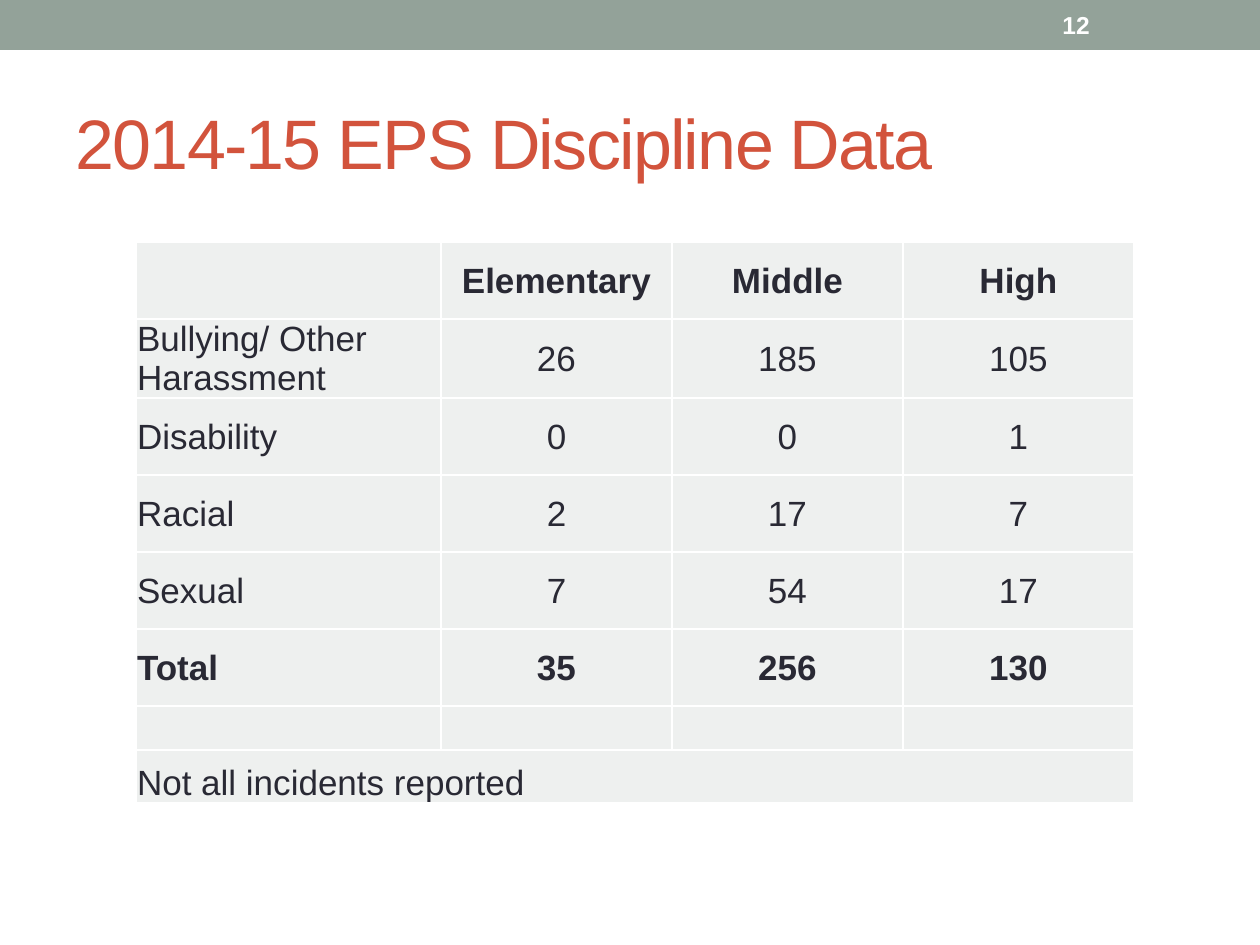
import lxml.etree
import pptx
import pptx.dml.color
import pptx.enum.shapes
import pptx.enum.text
import pptx.oxml.ns
import pptx.util

HEADING = "2014-15 EPS Discipline Data"
PAGE_NUMBER = "12"
INCIDENTS = [
    ("", "Elementary", "Middle", "High"),
    ("Bullying/ Other Harassment", "26", "185", "105"),
    ("Disability", "0", "0", "1"),
    ("Racial", "2", "17", "7"),
    ("Sexual", "7", "54", "17"),
    ("Total", "35", "256", "130"),
    ("", "", "", ""),
    ("Not all incidents reported", "", "", ""),
]
BOLD_ROWS = {0, 5}
NOTE_ROW = len(INCIDENTS) - 1

THEME = {
    "font": "Arial",
    "banner": "93A299",
    "heading": "D2533C",
    "ink": "292934",
    "cell": "EEF0EF",
    "white": "FFFFFF",
    "heading_size": 40,
    "table_size": 20,
    "number_size": 14,
    "rule_width": 1,
}

SLIDE_SIZE = (1260, 945)
BANNER_BOX = (0, 0, 1260, 50)
HEADING_BOX = (63, 73, 1134, 136)
NUMBER_BOX = (1050, 2, 147, 46)
TABLE_ORIGIN = (136, 242)
COLUMN_WIDTHS = [305] + [231] * 3
ROW_HEIGHTS = [77] * 6 + [44, 53]

ALIGN = pptx.enum.text.PP_ALIGN
ANCHOR = pptx.enum.text.MSO_ANCHOR


def px(length):
    return pptx.util.Emu(round(length * 914400 / 126))


def box(lengths):
    return [px(length) for length in lengths]


def color(name):
    return pptx.dml.color.RGBColor.from_string(THEME[name])


def write(frame, text, *, size, ink, bold=False, align=ALIGN.LEFT, tracking=None):
    paragraph = frame.paragraphs[0]
    paragraph.alignment = align
    run = paragraph.add_run()
    run.text = text
    run.font.name = THEME["font"]
    run.font.size = pptx.util.Pt(THEME[size])
    run.font.bold = bold
    run.font.color.rgb = color(ink)
    if tracking is not None:
        run.font._element.set("spc", str(tracking))


def rule_cell(cell):
    properties = cell._tc.get_or_add_tcPr()
    qn = pptx.oxml.ns.qn
    for side in ("a:lnL", "a:lnR", "a:lnT", "a:lnB"):
        width = pptx.util.Pt(THEME["rule_width"])
        rule = lxml.etree.SubElement(properties, qn(side), w=str(width))
        fill = lxml.etree.SubElement(rule, qn("a:solidFill"))
        lxml.etree.SubElement(fill, qn("a:srgbClr"), val=THEME["white"])


def add_banner(slide):
    banner = slide.shapes.add_shape(
        pptx.enum.shapes.MSO_SHAPE.RECTANGLE, *box(BANNER_BOX))
    banner.shadow.inherit = False
    banner.fill.solid()
    banner.fill.fore_color.rgb = color("banner")
    banner.line.fill.background()


def add_heading(slide):
    heading = slide.shapes.title
    heading.left, heading.top, heading.width, heading.height = box(HEADING_BOX)
    heading.text_frame.vertical_anchor = ANCHOR.MIDDLE
    write(heading.text_frame, HEADING, size="heading_size", ink="heading", tracking=-100)


def add_incidents(slide):
    extent = (sum(COLUMN_WIDTHS), sum(ROW_HEIGHTS))
    table = slide.shapes.add_table(
        len(INCIDENTS), len(COLUMN_WIDTHS), *box(TABLE_ORIGIN + extent)).table
    table.first_row = table.horz_banding = False
    for column, width in zip(table.columns, COLUMN_WIDTHS):
        column.width = px(width)
    for row, height in zip(table.rows, ROW_HEIGHTS):
        row.height = px(height)
    table.cell(NOTE_ROW, 0).merge(table.cell(NOTE_ROW, len(COLUMN_WIDTHS) - 1))
    for r, values in enumerate(INCIDENTS):
        for c, value in enumerate(values):
            cell = table.cell(r, c)
            rule_cell(cell)
            cell.fill.solid()
            cell.fill.fore_color.rgb = color("cell")
            cell.margin_left = cell.margin_right = cell.margin_top = px(1)
            cell.margin_bottom = 0
            cell.vertical_anchor = ANCHOR.BOTTOM if r == NOTE_ROW else ANCHOR.MIDDLE
            write(cell.text_frame, value, size="table_size", ink="ink",
                  bold=r in BOLD_ROWS, align=ALIGN.CENTER if c else ALIGN.LEFT)


def add_page_number(slide):
    number = slide.shapes.add_textbox(*box(NUMBER_BOX)).text_frame
    number.word_wrap = True
    number.vertical_anchor = ANCHOR.MIDDLE
    write(number, PAGE_NUMBER, size="number_size", ink="white", bold=True)


def main():
    deck = pptx.Presentation()
    deck.slide_width, deck.slide_height = box(SLIDE_SIZE)
    slide = deck.slides.add_slide(deck.slide_layouts.get_by_name("Title Only"))
    add_banner(slide)
    add_heading(slide)
    add_incidents(slide)
    add_page_number(slide)
    deck.save("out.pptx")


if __name__ == "__main__":
    main()
